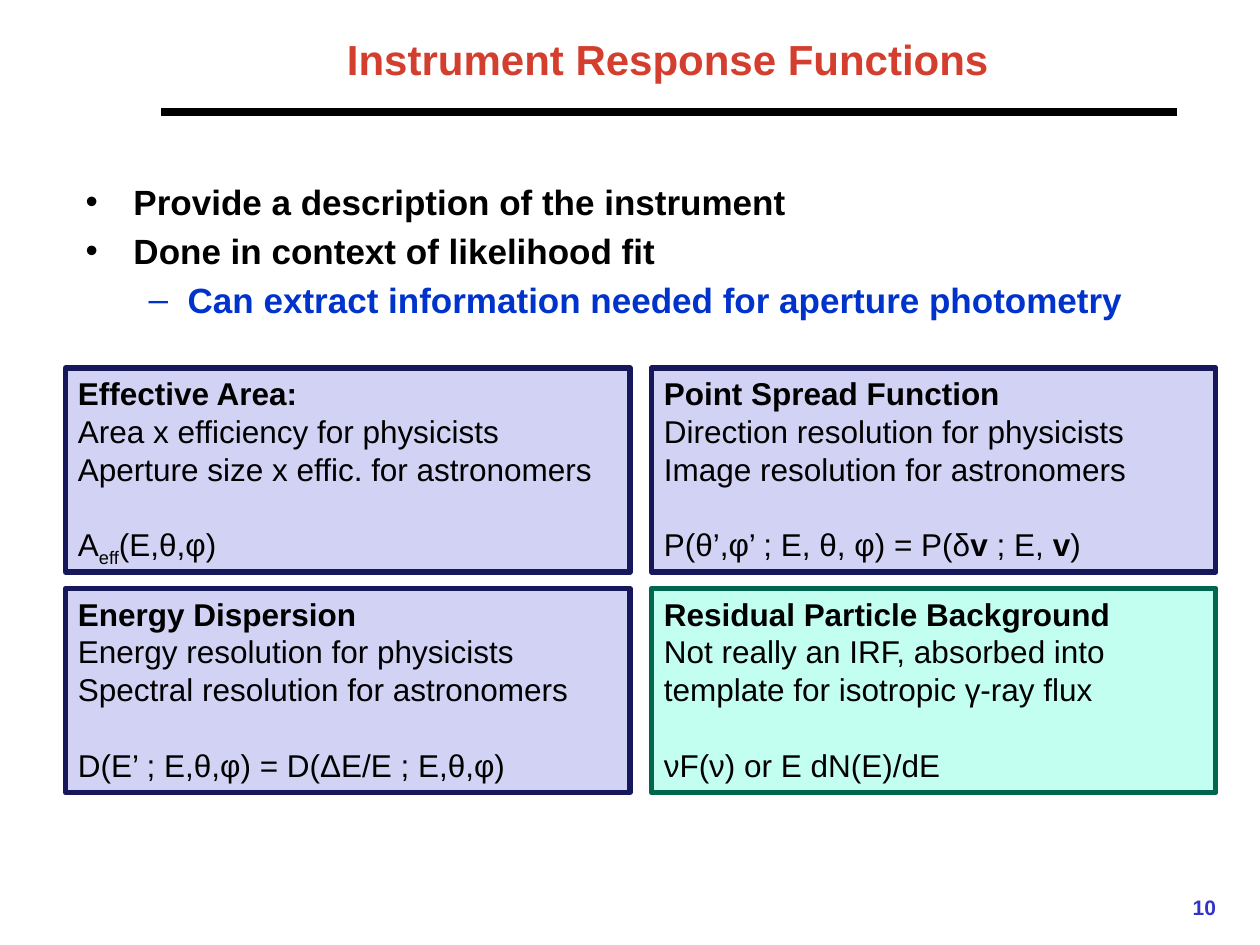
from lxml import etree
from pptx import Presentation
from pptx.dml.color import RGBColor
from pptx.enum.shapes import MSO_CONNECTOR, MSO_SHAPE
from pptx.enum.text import MSO_ANCHOR, PP_ALIGN
from pptx.oxml.ns import qn
from pptx.util import Emu, Inches, Pt

RECT = MSO_SHAPE.RECTANGLE
STRAIGHT = MSO_CONNECTOR.STRAIGHT
TOP, MIDDLE = MSO_ANCHOR.TOP, MSO_ANCHOR.MIDDLE
LEFT, CENTER, RIGHT = PP_ALIGN.LEFT, PP_ALIGN.CENTER, PP_ALIGN.RIGHT

FONT = "Arial"
COLORS = {
    "title": "D43E2E", "text": "000000", "detail": "0033CC", "number": "3333CC",
    "irf_fill": "D2D2F4", "irf_line": "17175C",
    "background_fill": "C2FFF0", "background_line": "00664D",
}

# Grid of boxes, in inches
GRID_LEFT, GRID_TOP = 0.52, 2.92
BOX_W, BOX_H = 4.48, 1.62
COL_STEP, ROW_STEP = 4.65, 1.75

# Level: bullet, text indent, hanging indent, colour
BULLETS = {0: ("•", 0.38, 0.38, "text"), 1: ("–", 0.81, 0.31, "detail")}

POINTS = [
    (0, "Provide a description of the instrument"),
    (0, "Done in context of likelihood fit"),
    (1, "Can extract information needed for aperture photometry"),
]

# Column, row, colour set, heading, description lines, formula runs (text, style)
BOXES = [
    (0, 0, "irf", "Effective Area:",
     ["Area x efficiency for physicists", "Aperture size x effic. for astronomers"],
     [("A", ""), ("eff", "sub"), ("(E,θ,φ)", "")]),
    (1, 0, "irf", "Point Spread Function",
     ["Direction resolution for physicists", "Image resolution for astronomers"],
     [("P(θ’,φ’ ; E, θ, φ) = P(δ", ""), ("v", "bold"), (" ; E, ", ""),
      ("v", "bold"), (")", "")]),
    (0, 1, "irf", "Energy Dispersion",
     ["Energy resolution for physicists", "Spectral resolution for astronomers"],
     [("D(E’ ; E,θ,φ) = D(ΔE/E ; E,θ,φ)", "")]),
    (1, 1, "background", "Residual Particle Background",
     ["Not really an IRF, absorbed into template for isotropic γ-ray flux"],
     [("νF(ν) or E dN(E)/dE", "")]),
]


def rgb(name):
    return RGBColor.from_string(COLORS[name])


def place(sp, left, top, width, height):
    values = {"left": left, "top": top, "width": width, "height": height}
    for name, value in values.items():
        setattr(sp, name, Inches(value))


def add_run(p, text, size, color="text", bold=False):
    r = p.add_run()
    r.text = text
    for name, value in {"name": FONT, "size": Pt(size), "bold": bold}.items():
        setattr(r.font, name, value)
    r.font.color.rgb = rgb(color)
    return r


def next_paragraph(tf):
    """Return the empty first paragraph, or a new one."""
    p = tf.paragraphs[0]
    return tf.add_paragraph() if p.runs else p


def add_text_box(slide, left, top, width, height, anchor=TOP):
    box = slide.shapes.add_textbox(*map(Inches, (left, top, width, height)))
    tf = box.text_frame
    tf.word_wrap = True
    tf.vertical_anchor = anchor
    return tf


def add_title(slide, text):
    title = slide.shapes.title
    place(title, 1.24, 0.11, 8.12, 0.72)
    tf = title.text_frame
    tf.vertical_anchor = MIDDLE
    p = tf.paragraphs[0]
    p.alignment = CENTER
    add_run(p, text, 24, "title", True)


def add_rule(slide):
    line = slide.shapes.add_connector(
        STRAIGHT, *map(Inches, (1.28, 0.89, 9.34, 0.89)))
    line.line.width = Pt(4.5)
    line.line.color.rgb = rgb("text")
    etree.SubElement(line._element.spPr, qn("a:effectLst"))


def add_points(slide):
    tf = add_text_box(slide, 0.68, 1.38, 8.74, 1.3)
    tf.margin_left = tf.margin_right = Emu(0)
    for i, (level, text) in enumerate(POINTS):
        char, indent, hanging, color = BULLETS[level]
        p = next_paragraph(tf)
        p.level = level
        pPr = p._p.get_or_add_pPr()
        pPr.set("marL", str(Inches(indent)))
        pPr.set("indent", str(-Inches(hanging)))
        if i:
            p.space_before = Pt(4)
        etree.SubElement(pPr, qn("a:buFont")).set("typeface", FONT)
        etree.SubElement(pPr, qn("a:buChar")).set("char", char)
        add_run(p, text, 20, color, True)


def add_box(slide, col, row, colors, heading, lines, formula):
    left, top = GRID_LEFT + col * COL_STEP, GRID_TOP + row * ROW_STEP
    sp = slide.shapes.add_shape(RECT, *map(Inches, (left, top, BOX_W, BOX_H)))
    sp.shadow.inherit = False
    sp.fill.solid()
    sp.fill.fore_color.rgb = rgb(f"{colors}_fill")
    sp.line.color.rgb = rgb(f"{colors}_line")
    sp.line.width = Pt(3)
    tf = sp.text_frame
    tf.word_wrap = True
    tf.vertical_anchor = TOP
    for text in [heading, *lines]:
        p = next_paragraph(tf)
        p.alignment = LEFT
        add_run(p, text, 18, bold=text == heading)
    p = tf.add_paragraph()
    p.alignment = LEFT
    p.space_before = Pt(21.5)
    for text, style in formula:
        r = add_run(p, text, 18, bold=style == "bold")
        if style == "sub":
            r._r.get_or_add_rPr().set("baseline", "-25000")


def add_slide_number(slide, number):
    tf = add_text_box(slide, 7.42, 7, 2.33, 0.4, MIDDLE)
    p = tf.paragraphs[0]
    p.alignment = RIGHT
    add_run(p, number, 12, "number", True)


def main():
    prs = Presentation()
    prs.slide_width, prs.slide_height = Inches(10), Inches(7.5)
    slide = prs.slides.add_slide(prs.slide_layouts[5])
    add_title(slide, "Instrument Response Functions")
    add_rule(slide)
    add_points(slide)
    for box in BOXES:
        add_box(slide, *box)
    add_slide_number(slide, "10")
    prs.save("out.pptx")


if __name__ == "__main__":
    main()
